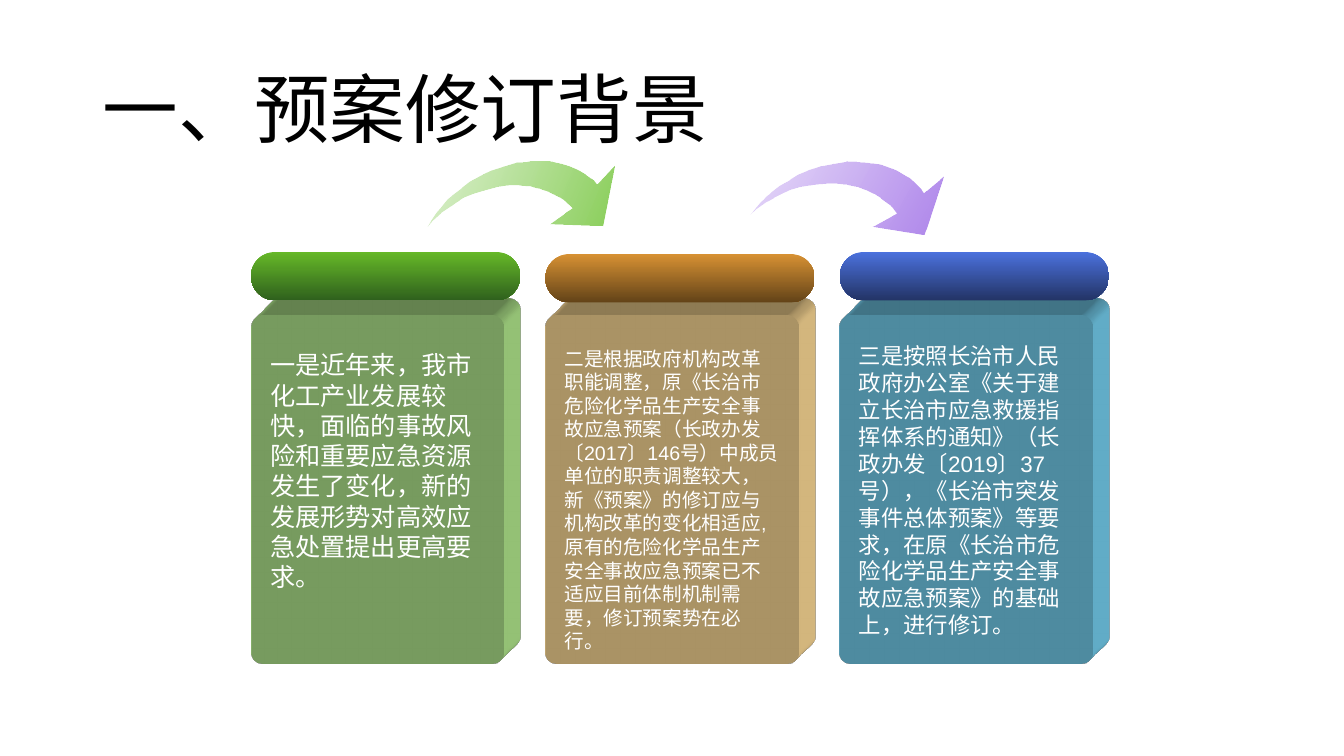
from dataclasses import dataclass
from math import cos, radians, sin

from lxml.etree import SubElement
from pptx import Presentation
from pptx.dml.color import RGBColor
from pptx.enum.shapes import MSO_SHAPE as Shape
from pptx.enum.text import MSO_ANCHOR as Anchor, MSO_AUTO_SIZE as AutoSize, PP_ALIGN as Align
from pptx.oxml import parse_xml
from pptx.oxml.ns import nsdecls, qn
from pptx.util import Inches, Pt


@dataclass(frozen=True)
class Theme:
    font: str = "Arial"
    title_size: int = 54
    title_color: str = "000000"
    text_color: str = "FFFFFF"


@dataclass(frozen=True)
class Column:
    panel_color: str
    cap_colors: tuple[str, str]
    cap_top: float
    text_top: float
    text_height: float
    text_size: int
    text: str


@dataclass(frozen=True)
class Arrow:
    center: tuple[float, float]
    tilt: float
    colors: tuple[str, str]


THEME = Theme()
FIRST_LEFT, COLUMN_PITCH = 2.49, 2.92
UNITS_PER_INCH = 1000
COLUMNS = [
    Column("A9DC86", ("66B828", "2F611D"), 2.5, 3.42, 2.52, 18,
           "一是近年来，我市化工产业发展较快，面临的事故风险和重要应急资源发生了变化，"
           "新的发展形势对高效应急处置提出更高要求。"),
    Column("F1D08F", ("D79133", "634318"), 2.52, 3.39, 2.93, 14,
           "二是根据政府机构改革职能调整，原《长治市危险化学品生产安全事故应急预案"
           "（长政办发〔2017〕146号）中成员单位的职责调整较大，新《预案》的修订"
           "应与机构改革的变化相适应,原有的危险化学品生产安全事故应急预案"
           "已不适应目前体制机制需要，修订预案势在必行。"),
    Column("6FC5E3", ("4B71DD", "233466"), 2.5, 3.35, 3.06, 16,
           "三是按照长治市人民政府办公室《关于建立长治市应急救援指挥体系的通知》"
           "（长政办发〔2019〕37号），《长治市突发事件总体预案》等要求，"
           "在原《长治市危险化学品生产安全事故应急预案》的基础上，进行修订。"),
]
ARROWS = [
    Arrow((5.22, 1.96), 22.2, ("93D267", "88CE58")),
    Arrow((8.45, 1.96), 29.2, ("B48EED", "AD83EB")),
]
# Arrow outline as seen at the first arrow's tilt, in slide inches
OUTLINE = [
    (4.24, 2.25), (4.29, 2.19), (4.38, 2.11), (4.45, 2.06), (4.52, 2.01), (4.6, 1.96),
    (4.7, 1.92), (4.8, 1.89), (4.91, 1.86), (5.04, 1.84), (5.15, 1.84), (5.26, 1.85),
    (5.35, 1.87), (5.43, 1.9), (5.49, 1.93), (5.55, 1.96), (5.6, 1.99), (5.67, 2.06),
    (5.45, 2.22), (5.97, 2.24), (6.09, 1.64), (5.91, 1.83), (5.88, 1.79), (5.8, 1.73),
    (5.75, 1.7), (5.69, 1.67), (5.62, 1.64), (5.55, 1.62), (5.45, 1.6), (5.35, 1.6),
    (5.25, 1.6), (5.12, 1.61), (4.99, 1.65), (4.87, 1.69), (4.76, 1.74), (4.66, 1.8),
    (4.57, 1.87), (4.49, 1.93), (4.42, 2.0), (4.37, 2.06), (4.32, 2.12), (4.28, 2.18),
]


def write(frame, text: str, *, size: int, color: str, spacing: float = 1.0,
          anchor=Anchor.TOP) -> None:
    frame.word_wrap = True
    frame.vertical_anchor = anchor
    para = frame.paragraphs[0]
    para.alignment = Align.LEFT
    para.line_spacing = spacing
    # Keep closing punctuation inside the line
    para._p.get_or_add_pPr().set("hangingPunct", "0")
    span = para.add_run()
    span.text = text
    span.font.name = THEME.font
    span.font.size = Pt(size)
    span.font.color.rgb = RGBColor.from_string(color)


def paint_gradient(shape, colors: tuple[str, str], *, angle: int, first_alpha: int = 100) -> None:
    shape.shadow.inherit = False
    shape.line.fill.background()
    shape.fill.gradient()
    shape.fill.gradient_angle = angle
    for stop, color in zip(shape.fill.gradient_stops, colors):
        stop.color.rgb = RGBColor.from_string(color)
    if first_alpha < 100:
        first = shape._element.spPr.find(".//" + qn("a:srgbClr"))
        SubElement(first, qn("a:alpha")).set("val", str(first_alpha * 1000))


def add_rounded(page, left: float, top: float, width: float, height: float, *, radius: float):
    box = page.shapes.add_shape(Shape.ROUNDED_RECTANGLE, Inches(left), Inches(top),
                                Inches(width), Inches(height))
    box.adjustments[0] = radius
    box.shadow.inherit = False
    box.line.fill.background()
    return box


def add_panel(page, left: float, color: str) -> None:
    panel = add_rounded(page, left, 3.13, 2.51, 3.45, radius=0.047)
    panel.fill.solid()
    panel.fill.fore_color.rgb = RGBColor.from_string(color)
    # Oblique extrusion towards the top right
    for xml in (
        f'<a:scene3d {nsdecls("a")}><a:camera prst="legacyObliqueTopRight"/>'
        '<a:lightRig rig="legacyFlat3" dir="b"/></a:scene3d>',
        f'<a:sp3d {nsdecls("a")} extrusionH="430200" prstMaterial="legacyMatte">'
        f'<a:extrusionClr><a:srgbClr val="{color}"/></a:extrusionClr></a:sp3d>',
    ):
        panel._element.spPr.append(parse_xml(xml))


def add_arrow(page, arrow: Arrow) -> None:
    origin_x, origin_y = ARROWS[0].center
    turn = radians(-ARROWS[0].tilt)
    center_x, center_y = arrow.center
    points = []
    for x, y in OUTLINE:
        dx, dy = x - origin_x, y - origin_y
        points.append(((center_x + dx * cos(turn) - dy * sin(turn)) * UNITS_PER_INCH,
                       (center_y + dx * sin(turn) + dy * cos(turn)) * UNITS_PER_INCH))
    builder = page.shapes.build_freeform(*points[0], scale=Inches(1) / UNITS_PER_INCH)
    builder.add_line_segments(points[1:], close=True)
    shape = builder.convert_to_shape()
    shape.rotation = arrow.tilt
    paint_gradient(shape, arrow.colors, angle=0, first_alpha=32)


def add_column_text(page, left: float, column: Column) -> None:
    box = page.shapes.add_textbox(Inches(left), Inches(column.text_top),
                                  Inches(2.33), Inches(column.text_height))
    write(box.text_frame, column.text, size=column.text_size, color=THEME.text_color)
    box.text_frame.auto_size = AutoSize.SHAPE_TO_FIT_TEXT


def main() -> None:
    deck = Presentation()
    deck.slide_width, deck.slide_height = Inches(13.33), Inches(7.5)
    page = deck.slides.add_slide(deck.slide_layouts[5])

    # Title
    title = page.shapes.title
    title.left, title.top = Inches(0.92), Inches(0.4)
    title.width, title.height = Inches(11.5), Inches(1.45)
    write(title.text_frame, "一、预案修订背景", size=THEME.title_size,
          color=THEME.title_color, spacing=0.9, anchor=Anchor.MIDDLE)

    # Columns: panel, cap and text
    for index, column in enumerate(COLUMNS):
        left = FIRST_LEFT + index * COLUMN_PITCH
        add_panel(page, left, column.panel_color)
        cap = add_rounded(page, left, column.cap_top, 2.67, 0.48, radius=0.5)
        paint_gradient(cap, column.cap_colors, angle=270)
        add_column_text(page, left + 0.09, column)

    # Arrows between columns
    for arrow in ARROWS:
        add_arrow(page, arrow)

    deck.save("out.pptx")


if __name__ == "__main__":
    main()
